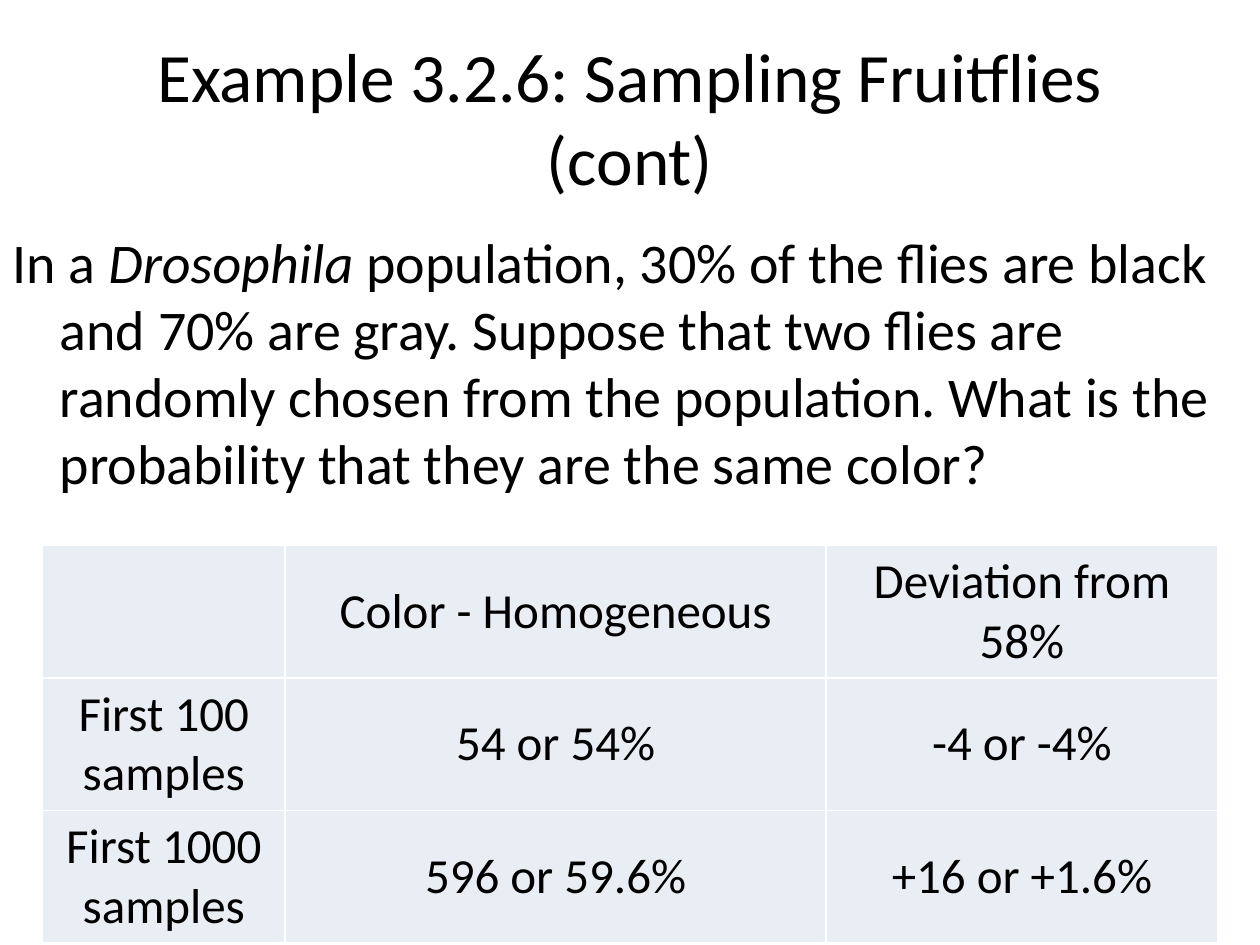
from lxml import etree
from pptx import Presentation
from pptx import util as u
from pptx.dml.color import RGBColor
from pptx.enum import text
from pptx.oxml.ns import qn

BLACK = RGBColor(0x00, 0x00, 0x00)
PALE_BLUE = RGBColor(0xE9, 0xED, 0xF4)
FONT = "Calibri"

HEADING = "Example 3.2.6: Sampling Fruitflies (cont)"
QUESTION = [
    ("In a ", False),
    ("Drosophila", True),
    (" population, 30% of the flies are black and 70% are gray. Suppose that "
     "two flies are randomly chosen from the population. What is the "
     "probability that they are the same color?", False),
]
RESULTS = [
    ("", "Color - Homogeneous", "Deviation from 58%"),
    ("First 100 samples", "54 or 54%", "-4 or -4%"),
    ("First 1000 samples", "596 or 59.6%", "+16 or +1.6%"),
]
COLUMN_WIDTHS = (4.9, 10.9, 7.9)
ROW_HEIGHT = 2.62


def add_run(paragraph, words, size, italic=False):
    run = paragraph.add_run()
    run.text = words
    run.font.name = FONT
    run.font.size = u.Pt(size)
    run.font.italic = italic
    run.font.color.rgb = BLACK


def place(part, left, top, width, height):
    part.left, part.top = u.Cm(left), u.Cm(top)
    part.width, part.height = u.Cm(width), u.Cm(height)
    part.text_frame.auto_size = text.MSO_AUTO_SIZE.NONE
    return part.text_frame.paragraphs[0]


def add_results(slide):
    results = slide.shapes.add_table(
        len(RESULTS), len(COLUMN_WIDTHS), u.Cm(0.85), u.Cm(11),
        u.Cm(sum(COLUMN_WIDTHS)), u.Cm(ROW_HEIGHT * len(RESULTS))).table
    results.first_row = False
    results.horz_banding = False
    for column, width in zip(results.columns, COLUMN_WIDTHS):
        column.width = u.Cm(width)
    for r, entries in enumerate(RESULTS):
        for c, entry in enumerate(entries):
            cell = results.cell(r, c)
            cell.fill.solid()
            cell.fill.fore_color.rgb = PALE_BLUE
            cell.vertical_anchor = text.MSO_ANCHOR.MIDDLE
            if entry:
                paragraph = cell.text_frame.paragraphs[0]
                paragraph.alignment = text.PP_ALIGN.CENTER
                add_run(paragraph, entry, 28)


def main():
    deck = Presentation()
    deck.slide_width, deck.slide_height = u.Cm(25.4), u.Cm(19.05)
    slide = deck.slides.add_slide(deck.slide_layouts[1])

    heading = place(slide.shapes.title, 1.27, 0.76, 22.86, 3.18)
    heading.alignment = text.PP_ALIGN.CENTER
    slide.shapes.title.text_frame.vertical_anchor = text.MSO_ANCHOR.MIDDLE
    add_run(heading, HEADING, 39.6)

    question = place(slide.placeholders[1], 0, 4.45, 25.4, 12.57)
    for words, italic in QUESTION:
        add_run(question, words, 32, italic)
    properties = question._p.get_or_add_pPr()
    properties.set("marL", str(u.Cm(0.95)))
    properties.set("indent", str(-u.Cm(0.95)))
    etree.SubElement(properties, qn("a:buNone"))

    add_results(slide)
    deck.save("out.pptx")


if __name__ == "__main__":
    main()
